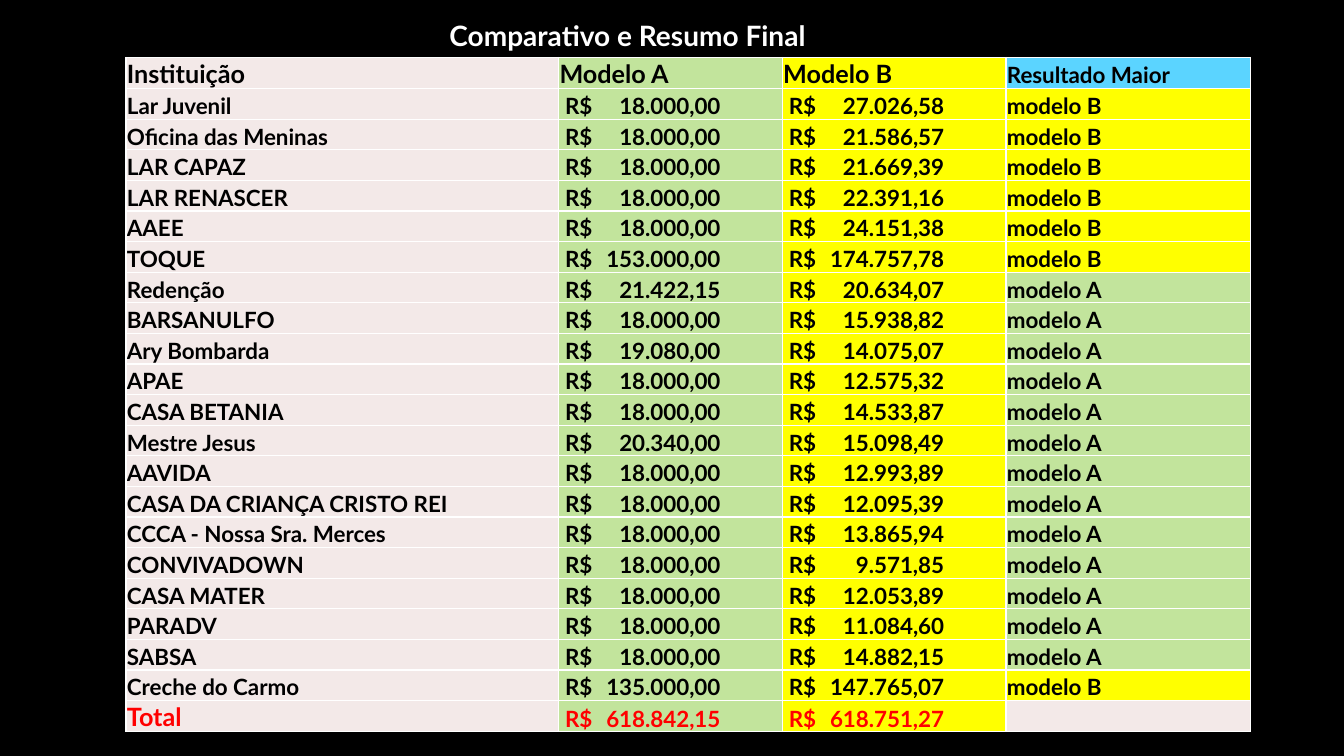
"""Build the slide comparing models A and B for each institution."""
from lxml import etree
from pptx import Presentation
from pptx.dml.color import RGBColor
from pptx.enum import text
from pptx.oxml import ns
from pptx.util import Pt

PINK, GREEN, YELLOW, BLUE = "F3E9E8", "C2E49C", "FFFF00", "5BD4FF"
BLACK, WHITE, RED = "000000", "FFFFFF", "FF0000"


def paint(fill, color):
    fill.solid()
    fill.fore_color.rgb = RGBColor.from_string(color)


def style(para, size, color):
    font = para.font
    font.name, font.size, font.bold = "Lato", Pt(size), True
    paint(font.fill, color)


rows = [
    ("Instituição", "Modelo A", "Modelo B", "Resultado Maior"),
    ("Lar Juvenil", "18.000,00", "27.026,58", "modelo B"),
    ("Oficina das Meninas", "18.000,00", "21.586,57", "modelo B"),
    ("LAR CAPAZ", "18.000,00", "21.669,39", "modelo B"),
    ("LAR RENASCER", "18.000,00", "22.391,16", "modelo B"),
    ("AAEE", "18.000,00", "24.151,38", "modelo B"),
    ("TOQUE", "153.000,00", "174.757,78", "modelo B"),
    ("Redenção", "21.422,15", "20.634,07", "modelo A"),
    ("BARSANULFO", "18.000,00", "15.938,82", "modelo A"),
    ("Ary Bombarda", "19.080,00", "14.075,07", "modelo A"),
    ("APAE", "18.000,00", "12.575,32", "modelo A"),
    ("CASA BETANIA", "18.000,00", "14.533,87", "modelo A"),
    ("Mestre Jesus", "20.340,00", "15.098,49", "modelo A"),
    ("AAVIDA", "18.000,00", "12.993,89", "modelo A"),
    ("CASA DA CRIANÇA CRISTO REI", "18.000,00", "12.095,39", "modelo A"),
    ("CCCA - Nossa Sra. Merces", "18.000,00", "13.865,94", "modelo A"),
    ("CONVIVADOWN", "18.000,00", "9.571,85", "modelo A"),
    ("CASA MATER", "18.000,00", "12.053,89", "modelo A"),
    ("PARADV", "18.000,00", "11.084,60", "modelo A"),
    ("SABSA", "18.000,00", "14.882,15", "modelo A"),
    ("Creche do Carmo", "135.000,00", "147.765,07", "modelo B"),
    ("Total", "618.842,15", "618.751,27", ""),
]
last = len(rows) - 1
fills = {"Resultado Maior": BLUE, "modelo A": GREEN, "modelo B": YELLOW, "": PINK}

deck = Presentation()
deck.slide_width, deck.slide_height = Pt(960), Pt(540)
slide = deck.slides.add_slide(deck.slide_layouts[6])
paint(slide.background.fill, BLACK)

title = slide.shapes.add_textbox(Pt(314), Pt(9.4), Pt(273.6), Pt(31.7)).text_frame
title.word_wrap = False
title.auto_size = text.MSO_AUTO_SIZE.SHAPE_TO_FIT_TEXT
title.text = "Comparativo e Resumo Final"
style(title.paragraphs[0], 20, WHITE)

frame = slide.shapes.add_table(len(rows), 4, Pt(90), Pt(41), Pt(803.5), Pt(481))
table = frame.table
for col, width in zip(table.columns, (309, 159.8, 159.8, 174.9)):
    col.width = Pt(width)

for r, row in enumerate(rows):
    table.rows[r].height = Pt(22.2 if r == 0 else 21.86)
    for c, words in enumerate(row):
        cell = table.cell(r, c)
        money = r > 0 and c in (1, 2)
        cell.text = f"R$\t{words}" if money else words
        cell.vertical_anchor = text.MSO_ANCHOR.BOTTOM
        cell.margin_left = Pt(4.7 if money else 0.7)
        cell.margin_right = cell.margin_top = Pt(0.7)
        cell.margin_bottom = 0
        paint(cell.fill, (PINK, GREEN, YELLOW, fills[row[3]])[c])

        para = cell.text_frame.paragraphs[0]
        big = (r == 0 and c < 3) or (r == last and c == 0)
        style(para, 18 if big else 16, RED if r == last else BLACK)
        if money:
            tabs = etree.Element(ns.qn("a:tabLst"))
            etree.SubElement(tabs, ns.qn("a:tab"), pos=str(Pt(111)), algn="r")
            para._p.pPr.insert(0, tabs)

        props = cell._tc.get_or_add_tcPr()
        for i, side in enumerate(("lnL", "lnR", "lnT", "lnB")):
            line = etree.Element(ns.qn(f"a:{side}"), w=str(Pt(1)))
            solid = etree.SubElement(line, ns.qn("a:solidFill"))
            etree.SubElement(solid, ns.qn("a:srgbClr"), val=WHITE)
            props.insert(i, line)

deck.save("out.pptx")
